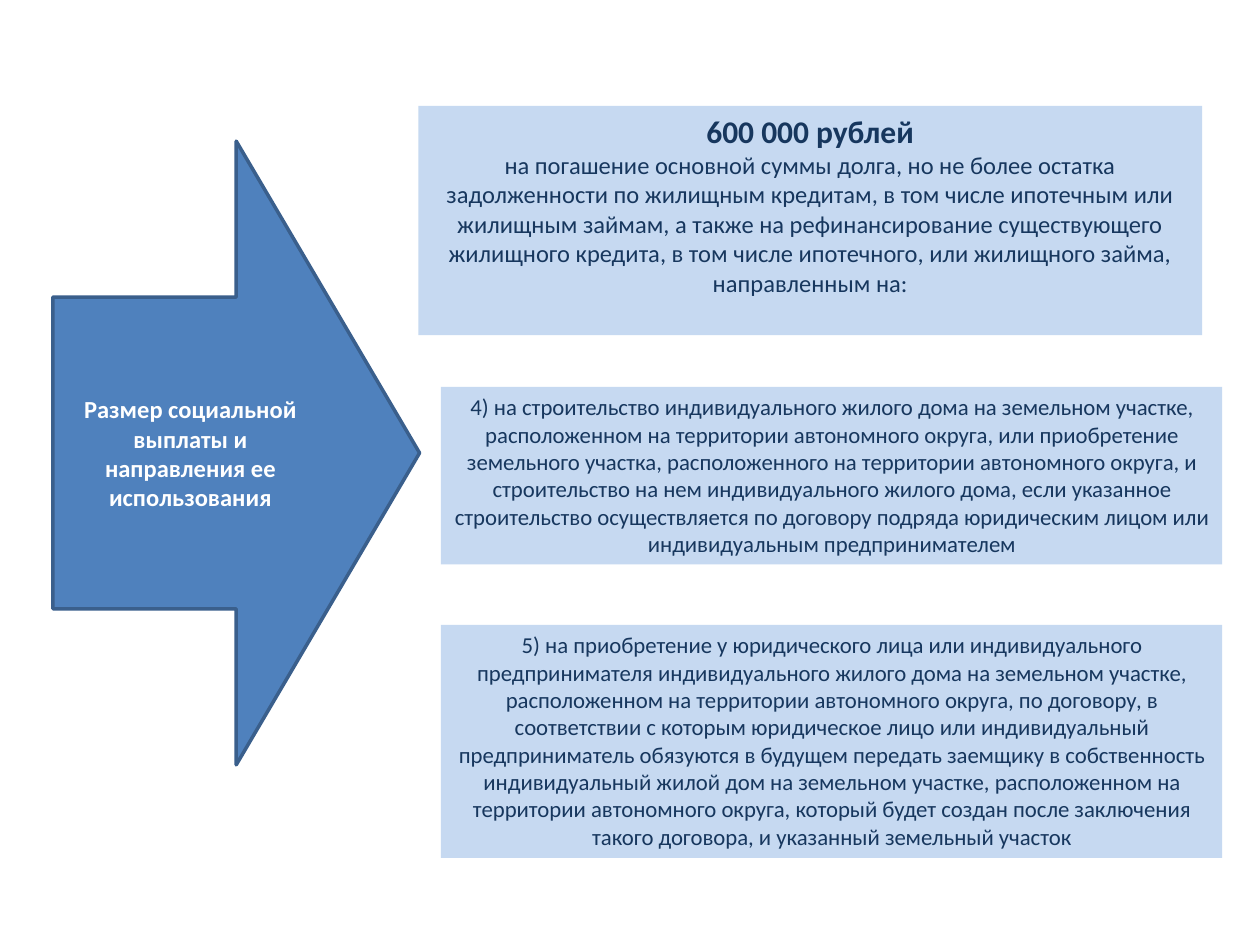
import pptx
import pptx.util
import pptx.dml.color
import pptx.enum.shapes
import pptx.enum.text

Inches = pptx.util.Inches
Shape = pptx.enum.shapes.MSO_SHAPE
Anchor = pptx.enum.text.MSO_ANCHOR
Align = pptx.enum.text.PP_ALIGN

COLORS = {"pale": "C6D9F1", "navy": "17375E", "blue": "4F81BD",
          "edge": "3A5F8C", "white": "FFFFFF"}

# Each format sets the font of one kind of paragraph
FORMATS = {
    "sum": {"size": 18, "bold": True, "color": "navy"},
    "terms": {"size": 14, "bold": False, "color": "navy"},
    "item": {"size": 13, "bold": False, "color": "navy"},
    "topic": {"size": 14, "bold": True, "color": "white"},
}


class Deck:
    """Holds the style and the current slide; the grid is 100 by 75 units."""
    font = "Calibri"
    cols, rows = 100, 75

    def __init__(self, wide, high):
        self.prs = pptx.Presentation()
        self.prs.slide_width = Inches(wide)
        self.prs.slide_height = Inches(high)
        self.slide = self.prs.slides.add_slide(self.prs.slide_layouts[6])

    def color(self, name):
        return pptx.dml.color.RGBColor.from_string(COLORS[name])

    def place(self, kind, area, fill):
        unit_x = self.prs.slide_width / self.cols
        unit_y = self.prs.slide_height / self.rows
        units = (unit_x, unit_y, unit_x, unit_y)
        shape = self.slide.shapes.add_shape(
            kind, *(round(n * unit) for n, unit in zip(area, units)))
        shape.shadow.inherit = False
        shape.fill.solid()
        shape.fill.fore_color.rgb = self.color(fill)
        return shape

    def label(self, shape, lines, anchor):
        frame = shape.text_frame
        frame.word_wrap = True
        frame.vertical_anchor = anchor
        for i, (style, text) in enumerate(lines):
            para = frame.add_paragraph() if i else frame.paragraphs[0]
            para.alignment = Align.CENTER
            run = para.add_run()
            run.text = text
            look = FORMATS[style]
            values = {"name": self.font, "size": pptx.util.Pt(look["size"]),
                      "bold": look["bold"]}
            for key, value in values.items():
                setattr(run.font, key, value)
            run.font.color.rgb = self.color(look["color"])

    def panel(self, area, lines):
        shape = self.place(Shape.RECTANGLE, area, "pale")
        shape.line.fill.background()
        self.label(shape, lines, Anchor.TOP)

    def arrow(self, area, lines):
        shape = self.place(Shape.RIGHT_ARROW, area, "blue")
        shape.line.color.rgb = self.color("edge")
        shape.line.width = pptx.util.Pt(2)
        self.label(shape, lines, Anchor.MIDDLE)


def main():
    deck = Deck(10, 7.5)

    # Amount of the payment
    deck.panel((33.2, 8.4, 62.2, 18.2), [
        ("sum", "600 000 рублей"),
        ("terms", "на погашение основной суммы долга, но не более остатка "
                  "задолженности по жилищным кредитам, в том числе ипотечным "
                  "или жилищным займам, а также на рефинансирование "
                  "существующего жилищного кредита, в том числе ипотечного, "
                  "или жилищного займа, направленным на:"),
    ])

    # Topic arrow
    deck.arrow((4.2, 11.2, 29.1, 49.5), [
        ("topic", "Размер социальной выплаты и направления ее использования"),
    ])

    # Numbered uses: top, height and wording
    uses = [
        (30.7, 14.1,
         "4) на строительство индивидуального жилого дома на земельном "
         "участке, расположенном на территории автономного округа, или "
         "приобретение земельного участка, расположенного на территории "
         "автономного округа, и строительство на нем индивидуального жилого "
         "дома, если указанное строительство осуществляется по договору "
         "подряда юридическим лицом или индивидуальным предпринимателем"),
        (49.6, 18.5,
         "5) на приобретение у юридического лица или индивидуального "
         "предпринимателя индивидуального жилого дома на земельном участке, "
         "расположенном на территории автономного округа, по договору, в "
         "соответствии с которым юридическое лицо или индивидуальный "
         "предприниматель обязуются в будущем передать заемщику в "
         "собственность индивидуальный жилой дом на земельном участке, "
         "расположенном на территории автономного округа, который будет "
         "создан после заключения такого договора, и указанный земельный "
         "участок"),
    ]
    for top, high, text in uses:
        deck.panel((35, top, 62, high), [("item", text)])

    deck.prs.save("out.pptx")


if __name__ == "__main__":
    main()
